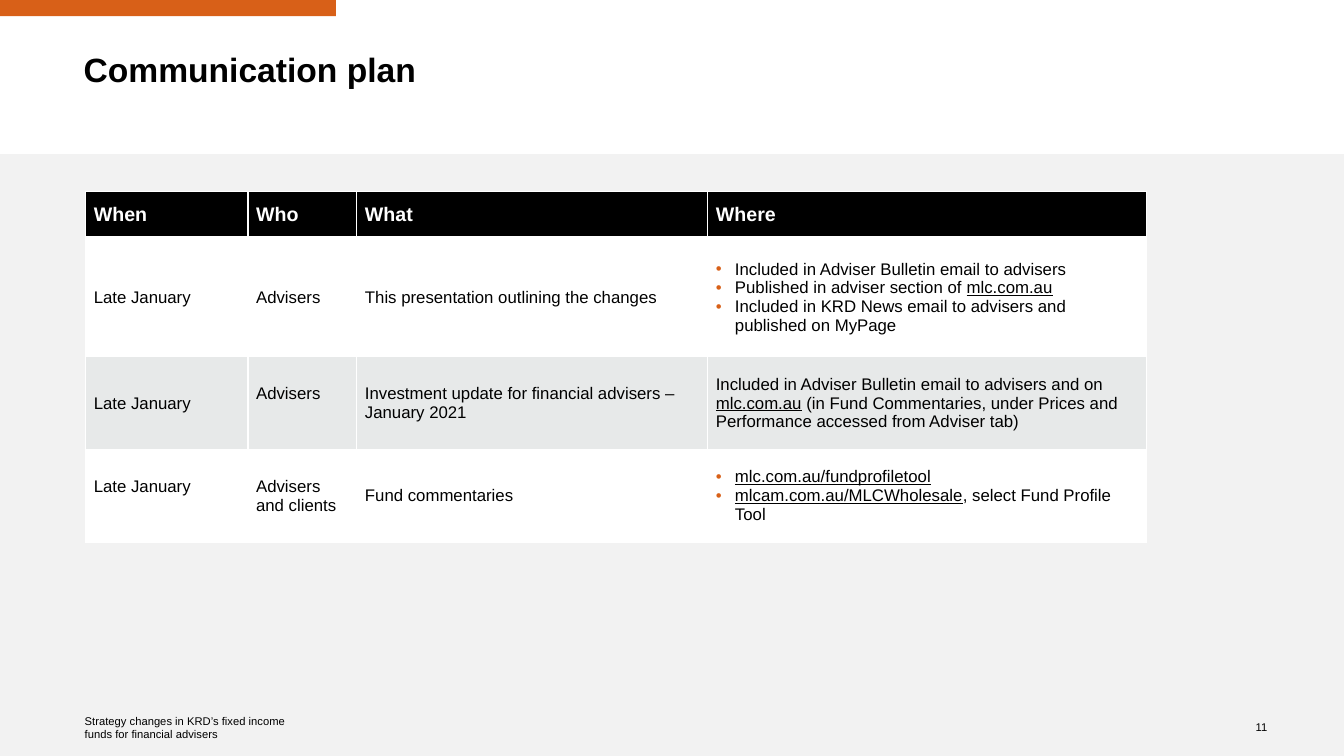
import dataclasses

import lxml.etree
import pptx
import pptx.dml.color
import pptx.enum.shapes
import pptx.enum.text
import pptx.oxml.ns
import pptx.util


@dataclasses.dataclass(frozen=True)
class Theme:
    font: str = "Arial"
    accent: str = "D86018"
    panel: str = "F2F2F2"
    band: str = "E7E9E9"
    black: str = "000000"
    white: str = "FFFFFF"
    title_size: int = 24
    header_size: int = 14
    body_size: int = 12
    footer_size: int = 8


theme = Theme()
Inches = pptx.util.Inches
Color = pptx.dml.color.RGBColor.from_string
Anchor = pptx.enum.text.MSO_ANCHOR
Align = pptx.enum.text.PP_ALIGN
qn = pptx.oxml.ns.qn


def style(paragraph, size, color=theme.black, bold=False):
    """Set the one font that all runs of the paragraph share."""
    font = paragraph.font
    font.name, font.size, font.bold = theme.font, pptx.util.Pt(size), bold
    font.color.rgb = Color(color)


def add_element(parent, tag, **attributes):
    return lxml.etree.SubElement(parent, qn(tag), attributes)


presentation = pptx.Presentation()
presentation.slide_width, presentation.slide_height = Inches(13.33), Inches(7.5)
width, height = presentation.slide_width, presentation.slide_height
slide = presentation.slides.add_slide(presentation.slide_layouts[6])

# Accent bar over the first quarter, grey panel below the title area
panel_top = int(height * 0.204)
for top, block_width, block_height, color in [
    (0, width // 4, Inches(0.16), theme.accent),
    (panel_top, width, height - panel_top, theme.panel),
]:
    shape = slide.shapes.add_shape(
        pptx.enum.shapes.MSO_SHAPE.RECTANGLE, 0, top, block_width, block_height)
    shape.shadow.inherit = False
    shape.fill.solid()
    shape.fill.fore_color.rgb = Color(color)
    shape.line.fill.background()

# Title, footer and page number
for text, box, size, bold, wrap, align, anchor in [
    ("Communication plan", (0.83, 0.53, 10.63, 0.57),
     theme.title_size, True, True, Align.LEFT, Anchor.TOP),
    ("Strategy changes in KRD’s fixed income funds for financial advisers",
     (0.84, 7.11, 2.21, 0.21),
     theme.footer_size, False, False, Align.LEFT, Anchor.MIDDLE),
    ("11", (12.29, 7.11, 0.28, 0.21),
     theme.footer_size, False, False, Align.RIGHT, Anchor.MIDDLE),
]:
    frame = slide.shapes.add_textbox(*map(Inches, box)).text_frame
    frame.margin_left = frame.margin_top = frame.margin_right = frame.margin_bottom = 0
    frame.word_wrap, frame.vertical_anchor = wrap, anchor
    paragraph = frame.paragraphs[0]
    paragraph.text, paragraph.alignment = text, align
    if bold:
        paragraph.line_spacing = 0.9
    style(paragraph, size, bold=bold)

# Plan table: a list is bulleted, underscores enclose underlined text
rows = [
    ["When", "Who", "What", "Where"],
    ["Late January", "Advisers", "This presentation outlining the changes",
     ["Included in Adviser Bulletin email to advisers",
      "Published in adviser section of _mlc.com.au_",
      "Included in KRD News email to advisers and published on MyPage"]],
    ["Late January", "Advisers",
     "Investment update for financial advisers – January 2021",
     "Included in Adviser Bulletin email to advisers and on _mlc.com.au_ "
     "(in Fund Commentaries, under Prices and Performance accessed from Adviser tab)"],
    ["Late January", "Advisers and clients", "Fund commentaries",
     ["_mlc.com.au/fundprofiletool_",
      "_mlcam.com.au/MLCWholesale_, select Fund Profile Tool"]],
]
column_widths = [1.61, 1.08, 3.48, 4.35]
row_heights = [0.46, 1.18, 0.92, 0.92]
raised_cells = {(2, 1), (3, 0)}
padding, line_height, bullet_indent = Inches(0.08), Inches(0.18), Inches(0.19)

table = slide.shapes.add_table(
    len(rows), len(column_widths), Inches(0.85), Inches(1.9),
    Inches(sum(column_widths)), Inches(sum(row_heights))).table
table.horz_banding = False
for column, column_width in zip(table.columns, column_widths):
    column.width = Inches(column_width)

for row_index, (row, row_height) in enumerate(zip(rows, row_heights)):
    table.rows[row_index].height = Inches(row_height)
    header = row_index == 0
    fill = theme.black if header else theme.band if row_index == 2 else theme.white
    for column_index, content in enumerate(row):
        cell = table.cell(row_index, column_index)
        cell.vertical_anchor = Anchor.MIDDLE
        cell.margin_left = cell.margin_top = cell.margin_right = padding
        raised = (row_index, column_index) in raised_cells
        cell.margin_bottom = padding + line_height if raised else padding

        properties = cell._tc.get_or_add_tcPr()
        for side in "LRTB":
            thick = (row_index, side) in [(0, "B"), (1, "T")]
            border = add_element(properties, f"a:ln{side}",
                                 w=str(pptx.util.Pt(3 if thick else 1)))
            add_element(add_element(border, "a:solidFill"), "a:srgbClr", val=theme.white)
        cell.fill.solid()
        cell.fill.fore_color.rgb = Color(fill)

        bulleted = isinstance(content, list)
        for index, text in enumerate(content if bulleted else [content]):
            frame = cell.text_frame
            paragraph = frame.add_paragraph() if index else frame.paragraphs[0]
            if bulleted:
                bullet = paragraph._p.get_or_add_pPr()
                bullet.set("marL", str(bullet_indent))
                bullet.set("indent", str(-bullet_indent))
                add_element(add_element(bullet, "a:buClr"), "a:srgbClr", val=theme.accent)
                add_element(bullet, "a:buFont", typeface=theme.font)
                add_element(bullet, "a:buChar", char="•")
            for part_index, part in enumerate(text.split("_")):
                if part:
                    run = paragraph.add_run()
                    run.text = part
                    if part_index % 2:
                        run.font.underline = True
            if header:
                style(paragraph, theme.header_size, theme.white, bold=True)
            else:
                style(paragraph, theme.body_size)

presentation.save("out.pptx")
